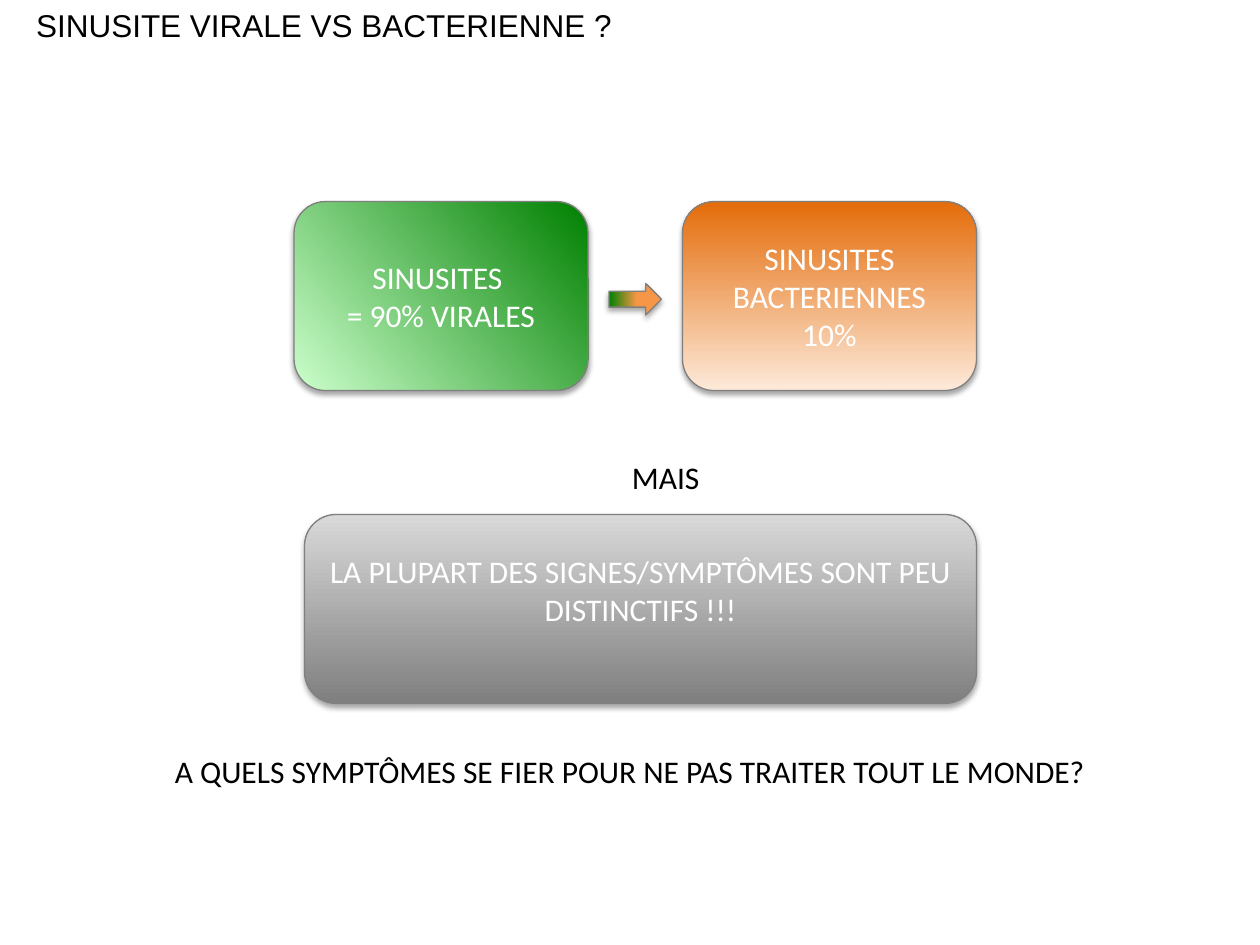
from lxml.etree import SubElement
from pptx import Presentation
from pptx.dml.color import RGBColor
from pptx.enum.shapes import MSO_SHAPE as Shape
from pptx.enum.text import MSO_ANCHOR as Anchor, PP_ALIGN as Align
from pptx.oxml.ns import qn
from pptx.util import Pt

BLACK, WHITE, GREY = "000000", "FFFFFF", "808080"


def color(value):
    return RGBColor.from_string(value)


def write(frame, text, font="Calibri", size=18, ink=BLACK, align=Align.LEFT):
    """Fill a text frame, one paragraph for each line of text."""
    frame.text = text
    for paragraph in frame.paragraphs:
        paragraph.alignment = align
        paragraph.font.name = font
        paragraph.font.size = Pt(size)
        paragraph.font.color.rgb = color(ink)


class SlideBuilder:
    line_color = GREY
    line_width = 0.75
    shadow_blur, shadow_distance, shadow_angle, shadow_alpha = 3.1, 1.8, 90, 35

    def __init__(self, slide):
        self.slide = slide

    def text(self, left, top, width, text, wrap=True, **style):
        box = self.slide.shapes.add_textbox(Pt(left), Pt(top), Pt(width), Pt(28.8))
        box.text_frame.word_wrap = wrap
        write(box.text_frame, text, **style)
        return box.text_frame

    def shape(self, kind, left, top, width, height, stops, angle):
        """Add a shadowed shape; the gradient angle runs clockwise."""
        shape = self.slide.shapes.add_shape(kind, Pt(left), Pt(top), Pt(width), Pt(height))
        shape.fill.gradient()
        shape.fill.gradient_angle = 360 - angle
        for stop, (position, value) in zip(shape.fill.gradient_stops, stops):
            stop.position = position
            stop.color.rgb = color(value)
        shape.line.color.rgb = color(self.line_color)
        shape.line.width = Pt(self.line_width)
        self.add_shadow(shape)
        return shape

    def add_shadow(self, shape):
        shape.shadow.inherit = False
        effects = shape._element.spPr.find(qn("a:effectLst"))
        shadow = SubElement(
            effects, qn("a:outerShdw"), blurRad=str(Pt(self.shadow_blur)),
            dist=str(Pt(self.shadow_distance)), dir=str(self.shadow_angle * 60000),
            rotWithShape="0")
        ink = SubElement(shadow, qn("a:srgbClr"), val=BLACK)
        SubElement(ink, qn("a:alpha"), val=str(self.shadow_alpha * 1000))

    def card(self, left, top, width, text, stops, angle, bottom_inset=3.6):
        shape = self.shape(Shape.ROUNDED_RECTANGLE, left, top, width, 108, stops, angle)
        frame = shape.text_frame
        frame.word_wrap = True
        frame.vertical_anchor = Anchor.MIDDLE
        frame.margin_bottom = Pt(bottom_inset)
        write(frame, text, ink=WHITE, align=Align.CENTER)


def main():
    presentation = Presentation()
    presentation.slide_width, presentation.slide_height = Pt(720), Pt(540)
    builder = SlideBuilder(presentation.slides.add_slide(presentation.slide_layouts[6]))

    title = builder.text(0, 0, 691.2, "SINUSITE VIRALE VS BACTERIENNE ?", font="Arial")
    title.paragraphs[0].level = 3
    properties = title.paragraphs[0]._p.get_or_add_pPr()
    properties.set("marL", str(Pt(41)))
    properties.set("indent", str(Pt(-27.4)))

    builder.card(168, 115.2, 168, "SINUSITES \n= 90% VIRALES",
                 [(0, "008000"), (1, "CCFFCC")], 139)
    builder.card(174, 294, 384, "LA PLUPART DES SIGNES/SYMPTÔMES SONT PEU DISTINCTIFS !!!",
                 [(0.01, GREY), (1, "D9D9D9")], 270, bottom_inset=25.2)
    builder.text(354, 258, 59, "MAIS", wrap=False)
    builder.card(390, 115.2, 168, "SINUSITES BACTERIENNES\n10%",
                 [(0, "FDEADA"), (1, "E46C0A")], 270)
    builder.shape(Shape.RIGHT_ARROW, 348, 162, 30, 18,
                  [(0, "008000"), (0.53, "F79646")], 0)
    builder.text(18, 426, 684, "A QUELS SYMPTÔMES SE FIER POUR NE PAS TRAITER TOUT LE MONDE?",
                 align=Align.CENTER)

    presentation.save("out.pptx")


if __name__ == "__main__":
    main()
